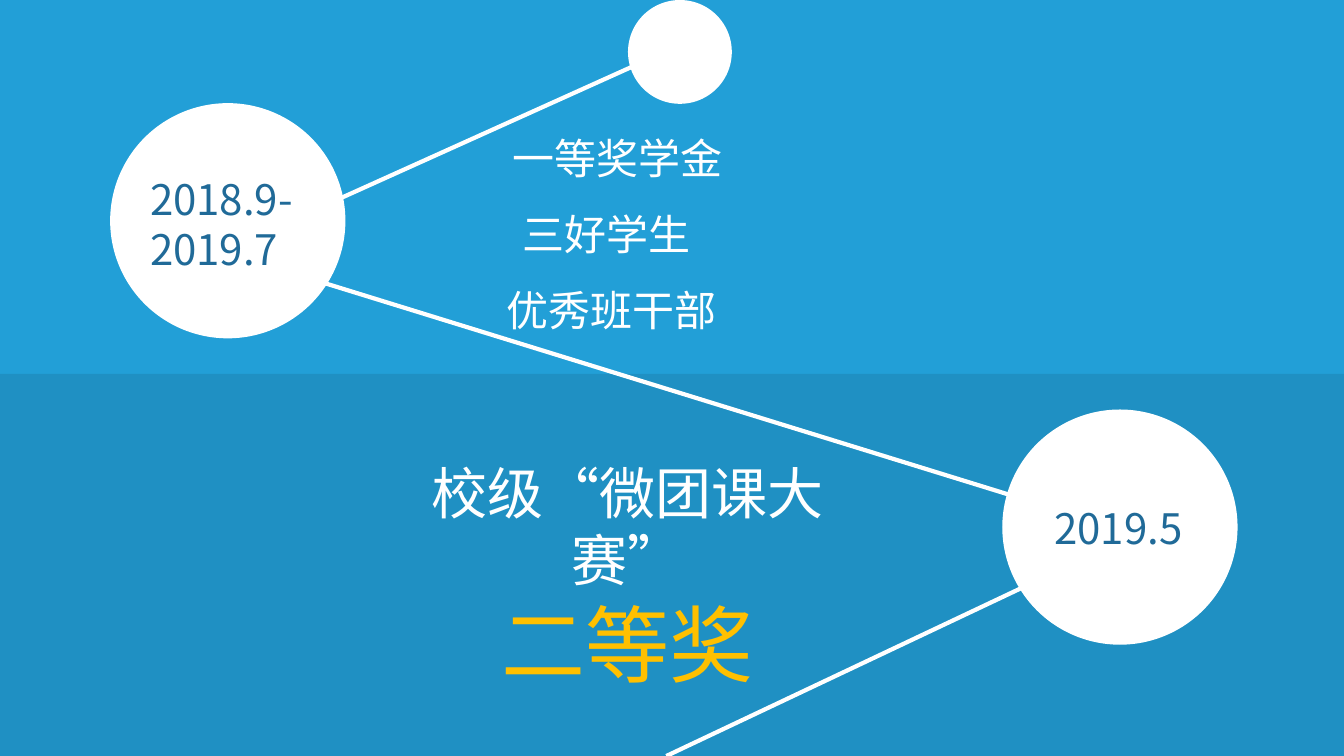
from lxml.etree import SubElement
from pptx import Presentation
from pptx.dml.color import RGBColor
from pptx.enum.shapes import MSO_CONNECTOR, MSO_SHAPE
from pptx.enum.text import PP_ALIGN
from pptx.oxml.ns import qn
from pptx.util import Inches, Pt

COLORS = {
    "sky": "229FD7",
    "sea": "1F90C3",
    "white": "FFFFFF",
    "date": "206A98",
    "gold": "FFC000",
}


class Timeline:
    """Draws on one slide; positions are percentages of its width and height."""

    font = "Noto Sans CJK SC"

    def __init__(self, deck):
        self.width, self.height = deck.slide_width, deck.slide_height
        self.shapes = deck.slides.add_slide(deck.slide_layouts[6]).shapes

    def x(self, share):
        return round(self.width * share / 100)

    def y(self, share):
        return round(self.height * share / 100)

    def color(self, name):
        return RGBColor.from_string(COLORS[name])

    def solid(self, preset, left, top, width, height, color):
        shape = self.shapes.add_shape(preset, left, top, width, height)
        shape.shadow.inherit = False
        shape.fill.solid()
        shape.fill.fore_color.rgb = self.color(color)
        shape.line.fill.background()
        return shape

    def band(self, top, bottom, color):
        self.solid(MSO_SHAPE.RECTANGLE, 0, self.y(top), self.width,
                   self.y(bottom - top), color)

    def node(self, center_x, center_y, diameter, outlined=True):
        size = self.y(diameter)
        circle = self.solid(MSO_SHAPE.OVAL, self.x(center_x) - size // 2,
                            self.y(center_y) - size // 2, size, size, "white")
        if outlined:
            circle.line.color.rgb = self.color("white")
            circle.line.width = Pt(1)

    def link(self, start, end):
        line = self.shapes.add_connector(
            MSO_CONNECTOR.STRAIGHT, self.x(start[0]), self.y(start[1]),
            self.x(end[0]), self.y(end[1]))
        line.line.color.rgb = self.color("white")
        line.line.width = Pt(3)
        SubElement(line._element.spPr, qn("a:effectLst"))

    def text(self, left, top, width, height, lines, align=PP_ALIGN.LEFT,
             spacing=None):
        """Each line is (wording, size, color, left indent in inches)."""
        box = self.shapes.add_textbox(self.x(left), self.y(top),
                                      self.x(width), self.y(height))
        frame = box.text_frame
        frame.word_wrap = True
        frame.text = "\n".join(line[0] for line in lines)
        for paragraph, (_, size, color, indent) in zip(frame.paragraphs, lines):
            paragraph.alignment = align
            paragraph.line_spacing = spacing
            if indent:
                properties = paragraph._p.get_or_add_pPr()
                properties.set("marL", str(Inches(indent)))
                properties.set("indent", "0")
            for run in paragraph.runs:
                run.font.size = Pt(size)
                run.font.name = self.font
                run.font.color.rgb = self.color(color)
                SubElement(run.font._element, qn("a:ea"), typeface=self.font)


def main():
    deck = Presentation()
    deck.slide_width, deck.slide_height = Inches(13.33), Inches(7.5)
    timeline = Timeline(deck)

    # Background bands
    timeline.band(0, 49.47, "sky")
    timeline.band(49.47, 100, "sea")

    # Timeline nodes and the path between them
    timeline.node(50.59, 6.87, 13.73, outlined=False)
    for center in ((16.95, 29.2), (83.33, 69.73)):
        timeline.node(*center, 30.93)
    for start, end in (((48.23, 7.87), (23.78, 27.47)),
                       ((22.73, 36.67), (77.33, 66.67)),
                       ((78.45, 75.73), (49.58, 100))):
        timeline.link(start, end)

    # Dates
    timeline.text(10.43, 22.27, 18.3, 14.8,
                  [("2018.9-2019.7", 30, "date", 0)])
    timeline.text(77.7, 65.87, 19.58, 8, [("2019.5", 30, "date", 0)])

    # School year awards
    timeline.text(32.85, 13.6, 36.9, 32.3,
                  [("一等奖学金", 30, "white", 0.61),
                   ("三好学生", 30, "white", 0.71),
                   ("优秀班干部", 30, "white", 0.55)], spacing=1.5)

    # Contest prize
    timeline.text(29.1, 60, 35.18, 32.8,
                  [("校级“微团课大赛”", 40, "white", 0),
                   ("二等奖", 60, "gold", 0)], align=PP_ALIGN.CENTER)

    deck.save("out.pptx")


if __name__ == "__main__":
    main()
